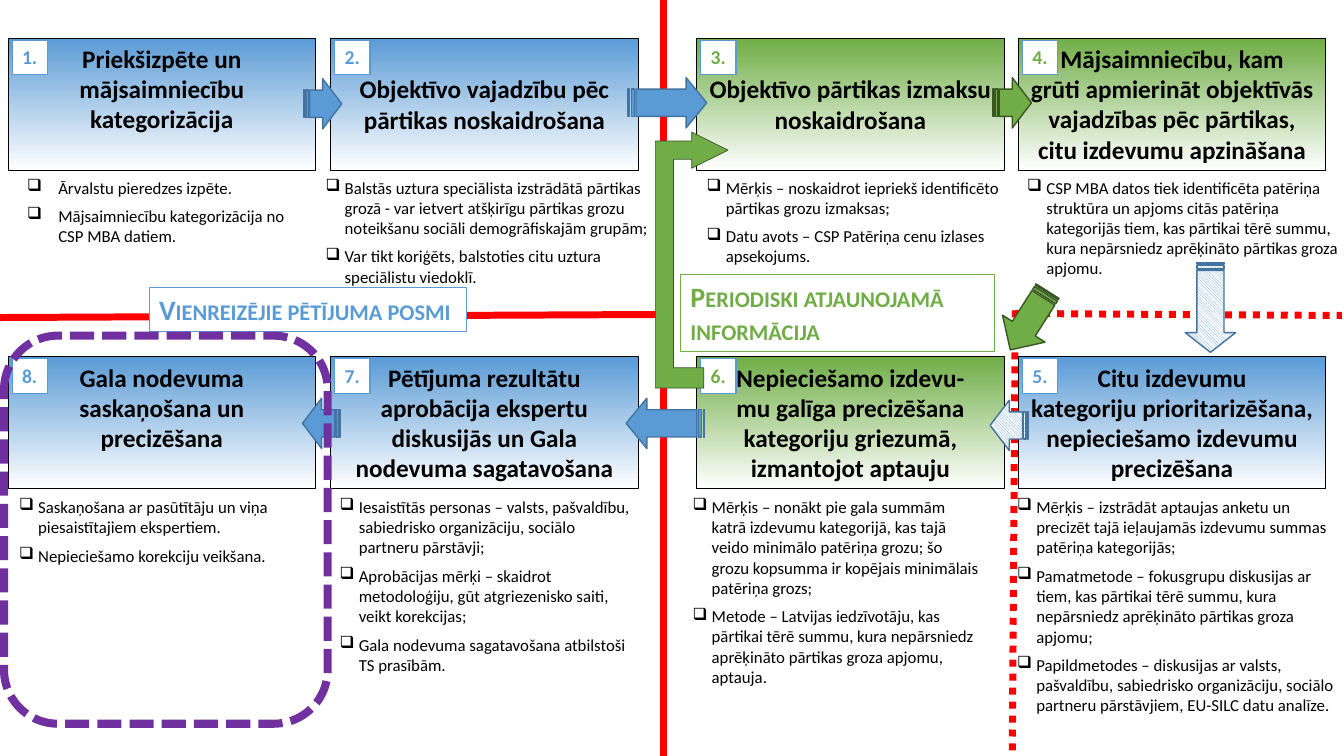
import pptx
import pptx.dml.color
import pptx.enum.dml
import pptx.enum.shapes
import pptx.enum.text
import pptx.oxml.ns
import pptx.util
from lxml import etree

KIND = pptx.enum.shapes.MSO_SHAPE
ALIGN = pptx.enum.text.PP_ALIGN
DASH = pptx.enum.dml.MSO_LINE
BLUE, GREEN, RED, PURPLE = "5B9BD5", "70AD47", "FF0000", "7030A0"
NAVY, MOSS, BLACK, WHITE = "43739E", "385723", "000000", "FFFFFF"


def tint(code):
    return pptx.dml.color.RGBColor.from_string(code)


class Board:
    """Draws on one slide; lengths count grid cells of a tenth of an inch."""

    font = "Calibri"
    cell = pptx.util.Inches(0.1)

    def __init__(self, deck):
        self.slide = deck.slides.add_slide(deck.slide_layouts[6])
        self.shapes = self.slide.shapes

    def emu(self, *cells):
        return [round(n * self.cell) for n in cells]

    def stroke(self, line, color, weight, dash=None):
        line.color.rgb = tint(color)
        line.width = pptx.util.Pt(weight)
        if dash:
            line.dash_style = dash

    def rule(self, start, end, color, weight, dash=None):
        link = self.shapes.add_connector(
            pptx.enum.shapes.MSO_CONNECTOR.STRAIGHT, *self.emu(*start, *end))
        self.stroke(link.line, color, weight, dash)
        etree.SubElement(link._element.spPr, pptx.oxml.ns.qn("a:effectLst"))

    def box(self, place, edge, weight=0.75, fill=None, kind=KIND.RECTANGLE, dash=None):
        item = self.shapes.add_shape(kind, *self.emu(*place))
        item.shadow.inherit = False
        self.stroke(item.line, edge, weight, dash)
        if fill:
            item.fill.solid()
            item.fill.fore_color.rgb = tint(fill)
        else:
            item.fill.background()
        return item

    def fade(self, item, color):
        """Fill from the colour at the top to white at the bottom."""
        item.fill.gradient()
        item.fill.gradient_angle = 270
        for place, (stop, code) in enumerate(zip(item.fill.gradient_stops, (color, WHITE))):
            stop.position = place
            stop.color.rgb = tint(code)

    def text(self, item, lines, size, color=BLACK, bold=False, align=ALIGN.LEFT,
             wrap=True, small=False, hang=0):
        """Put in one paragraph a line; hang is the bullet indent in cells."""
        frame = item.text_frame
        frame.word_wrap = wrap
        frame.auto_size = pptx.enum.text.MSO_AUTO_SIZE.SHAPE_TO_FIT_TEXT
        frame.vertical_anchor = pptx.enum.text.MSO_ANCHOR.TOP
        frame.text = "\n".join(lines)
        for par in frame.paragraphs:
            par.alignment = align
            if hang:
                par.space_after = pptx.util.Pt(6)
                self.bullet(par, hang)
            par.font.name = self.font
            par.font.size = pptx.util.Pt(size)
            par.font.bold = bold
            par.font.color.rgb = tint(color)
            if small:
                par.font._rPr.set("cap", "small")

    def bullet(self, par, hang):
        props = par._p.get_or_add_pPr()
        depth, = self.emu(hang)
        props.set("marL", str(depth))
        props.set("indent", str(-depth))
        etree.SubElement(props, pptx.oxml.ns.qn("a:buChar")).set("char", "❑")

    def title(self, place, color, lines, lead):
        item = self.box(place, BLACK)
        self.fade(item, color)
        self.text(item, lines, 18, bold=True, align=ALIGN.CENTER)
        item.text_frame.margin_top, = self.emu(0.5 + lead)

    def notes(self, place, points, hang):
        item = self.shapes.add_textbox(*self.emu(*place))
        self.text(item, points, 12, hang=hang)

    def label(self, place, words, size, color, edge, fill=WHITE, wrap=False, small=False):
        item = self.box(place, edge, fill=fill)
        self.text(item, [words], size, color, bold=True, wrap=wrap, small=small)

    def arrow(self, left, top, width, turn=0, color=BLUE, edge=NAVY, head=0.5, hatch=False):
        item = self.box((left, top, width, 5), edge, 1, color, KIND.STRIPED_RIGHT_ARROW)
        item.adjustments[0], item.adjustments[1] = 0.54, head
        item.rotation = turn
        if hatch:
            item.fill.patterned()
            item.fill.pattern = pptx.enum.dml.MSO_PATTERN.DARK_DOWNWARD_DIAGONAL
            item.fill.fore_color.rgb = tint(color)
            item.fill.back_color.rgb = tint(WHITE)

    def outline(self, points, fill, edge, weight):
        first, *rest = [self.emu(*point) for point in points]
        pen = self.shapes.build_freeform(*first)
        pen.add_line_segments(rest, close=True)
        item = pen.convert_to_shape()
        item.shadow.inherit = False
        item.fill.solid()
        item.fill.fore_color.rgb = tint(fill)
        self.stroke(item.line, edge, weight)


COLS, ROWS, NOTES = (0.8, 32.8, 69.1, 101), (3.8, 35.4), (17.1, 48.8)
WIDE, HIGH = 30.5, 13.1
# number, column, row, colour, title, title drop, notes (left, width, height), indent, points
STAGES = [
    (1, 0, 0, BLUE, ["Priekšizpēte un mājsaimniecību kategorizācija"], 0, (1.7, 28, 7.9), 3.1,
     ["Ārvalstu pieredzes izpēte.", "Mājsaimniecību kategorizācija no CSP MBA datiem."]),
    (2, 1, 0, BLUE, ["Objektīvo vajadzību pēc pārtikas noskaidrošana"], 3, (31.3, 34.5, 11.9), 1.9,
     ["Balstās uztura speciālista izstrādātā pārtikas grozā - var ietvert atšķirīgu pārtikas "
      "grozu noteikšanu sociāli demogrāfiskajām grupām;",
      "Var tikt koriģēts, balstoties citu uztura speciālistu viedoklī."]),
    (3, 2, 0, GREEN, ["Objektīvo pārtikas izmaksu noskaidrošana"], 3, (69.1, 31.8, 9.9), 1.9,
     ["Mērķis – noskaidrot iepriekš identificēto pārtikas grozu izmaksas;",
      "Datu avots – CSP Patēriņa cenu izlases apsekojums."]),
    (4, 3, 0, GREEN,
     ["Mājsaimniecību, kam",
      "grūti apmierināt objektīvās vajadzības pēc pārtikas, citu izdevumu apzināšana"],
     0, (100.9, 33.7, 11.1), 1.9,
     ["CSP MBA datos tiek identificēta patēriņa struktūra un apjoms citās patēriņa kategorijās "
      "tiem, kas pārtikai tērē summu, kura nepārsniedz aprēķināto pārtikas groza apjomu."]),
    (5, 3, 1, BLUE,
     ["Citu izdevumu", "kategoriju prioritarizēšana, nepieciešamo izdevumu precizēšana"],
     0, (99.9, 33.6, 22.9), 1.9,
     ["Mērķis – izstrādāt aptaujas anketu un precizēt tajā ieļaujamās izdevumu summas "
      "patēriņa kategorijās;",
      "Pamatmetode – fokusgrupu diskusijas ar tiem, kas pārtikai tērē summu, kura nepārsniedz "
      "aprēķināto pārtikas groza apjomu;",
      "Papildmetodes – diskusijas ar valsts, pašvaldību, sabiedrisko organizāciju, sociālo "
      "partneru pārstāvjiem, EU-SILC datu analīze."]),
    (6, 2, 1, GREEN,
     ["Nepieciešamo izdevu-", "mu galīga precizēšana kategoriju griezumā, izmantojot aptauju"],
     0, (67.7, 30.5, 20), 1.9,
     ["Mērķis – nonākt pie gala summām katrā izdevumu kategorijā, kas tajā veido minimālo "
      "patēriņa grozu; šo grozu kopsumma ir kopējais minimālais patēriņa grozs;",
      "Metode – Latvijas iedzīvotāju, kas pārtikai tērē summu, kura nepārsniedz aprēķināto "
      "pārtikas groza apjomu, aptauja."]),
    (7, 1, 1, BLUE,
     ["Pētījuma rezultātu aprobācija ekspertu diskusijās un Gala nodevuma sagatavošana"],
     0, (32.7, 30.9, 18.8), 1.9,
     ["Iesaistītās personas – valsts, pašvaldību, sabiedrisko organizāciju, sociālo partneru "
      "pārstāvji;",
      "Aprobācijas mērķi – skaidrot metodoloģiju, gūt atgriezenisko saiti, veikt korekcijas;",
      "Gala nodevuma sagatavošana atbilstoši TS prasībām."]),
    (8, 0, 1, BLUE, ["Gala nodevuma saskaņošana un precizēšana"], 0, (0.9, 28.1, 7.9), 1.9,
     ["Saskaņošana ar pasūtītāju un viņa piesaistītajiem ekspertiem.",
      "Nepieciešamo korekciju veikšana."]),
]


def main():
    deck = pptx.Presentation()
    deck.slide_width, deck.slide_height = pptx.util.Inches(13.33), pptx.util.Inches(7.5)
    board = Board(deck)

    board.rule((100.7, 31.1), (133.1, 31.3), RED, 5, DASH.ROUND_DOT)
    board.rule((100.7, 30.8), (100.4, 75), RED, 5, DASH.ROUND_DOT)
    board.rule((0, 31.5), (65.7, 31.2), RED, 5)
    board.rule((65.8, 0), (65.8, 75), RED, 5)

    for _, col, row, color, lines, lead, (left, *size), hang, points in STAGES:
        board.title((COLS[col], ROWS[row], WIDE, HIGH), color, lines, lead)
        board.notes((left, NOTES[row], *size), points, hang)

    board.arrow(30.1, 7.8, 3.8)
    board.arrow(62.3, 7.7, 7.8, head=0.41)
    board.arrow(98.5, 7.7, 3.8, color=GREEN, edge=MOSS)
    board.arrow(115.6, 28, 8.9, 90, head=0.39, hatch=True)
    board.arrow(98.2, 39.7, 3.8, 180, hatch=True)
    board.arrow(62.1, 39.5, 7.8, 180, head=0.41)
    board.arrow(30, 39.5, 3.8, 180)

    board.label((67.5, 27.2, 31.1, 7.7), "Periodiski atjaunojamā informācija", 20,
                GREEN, GREEN, fill=None, wrap=True, small=True)
    board.label((14.8, 28.5, 31.5, 4.4), "Vienreizējie pētījuma posmi", 20,
                BLUE, BLUE, small=True)
    for number, col, row, color, *_ in STAGES:
        board.label((COLS[col] + 0.4, ROWS[row] + 0.2, 3.5, 3.4), f"{number}.", 14, color, BLUE)

    board.outline([(69.8, 38.5), (65, 38.5), (65, 14), (68.6, 14), (68.6, 13.1), (72.2, 14.9),
                   (68.6, 16.7), (68.6, 15.8), (66.8, 15.8), (66.8, 36.5), (69.8, 36.5)],
                  GREEN, MOSS, 0.5)
    board.arrow(98.6, 29.3, 6.9, 122.4, GREEN, MOSS)
    board.box((0.4, 33.3, 32.1, 38.5), PURPLE, 5.75, kind=KIND.ROUNDED_RECTANGLE,
              dash=DASH.SQUARE_DOT)
    deck.save("out.pptx")


if __name__ == "__main__":
    main()
